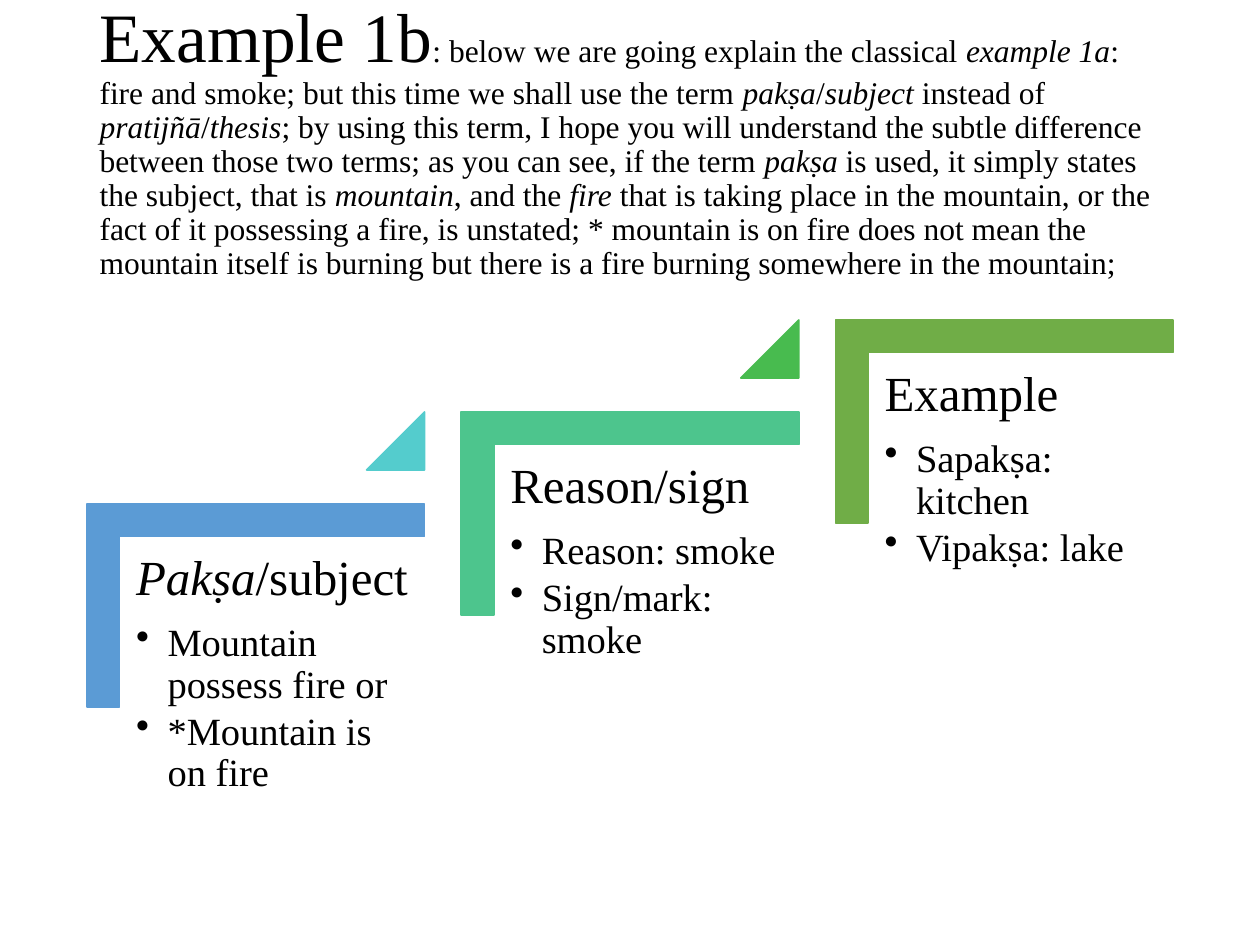
from dataclasses import dataclass

from lxml import etree
from pptx import Presentation
from pptx.dml.color import RGBColor
from pptx.enum.shapes import MSO_SHAPE
from pptx.enum.text import MSO_ANCHOR, MSO_AUTO_SIZE, PP_ALIGN
from pptx.oxml.ns import qn
from pptx.util import Pt

CORNER, TRIANGLE = MSO_SHAPE.CORNER, MSO_SHAPE.ISOSCELES_TRIANGLE
LEFT, TOP, MIDDLE = PP_ALIGN.LEFT, MSO_ANCHOR.TOP, MSO_ANCHOR.MIDDLE
NO_FIT = MSO_AUTO_SIZE.NONE
TITLE_ONLY = 5
EMU_PER_PX = 9144  # 100 px to the inch


@dataclass(frozen=True)
class Theme:
    font: str = "Times New Roman"
    text: str = "000000"
    title: float = 39.6
    intro: int = 18
    heading: int = 28
    item: int = 22
    corners: tuple = ("5B9BD5", "4DC58D", "70AD47")
    triangles: tuple = ("54CCCD", "48BB4F")


THEME = Theme()

INTRO = (
    ": below we are going explain the classical _example 1a_: fire and smoke; "
    "but this time we shall use the term _pakṣa_/_subject_ instead of "
    "_pratijñā_/_thesis_; by using this term, I hope you will understand the "
    "subtle difference between those two terms; as you can see, if the term "
    "_pakṣa_ is used, it simply states the subject, that is _mountain_, and the "
    "_fire _that is taking place in the mountain, or the fact of it possessing "
    "a fire, is unstated; * mountain is on fire does not mean the mountain "
    "itself is burning but there is a fire burning somewhere in the mountain;"
)
STEPS = [
    ("_Pakṣa_/subject", ["Mountain possess fire or", "*Mountain is on fire"]),
    ("Reason/sign", ["Reason: smoke", "Sign/mark: smoke"]),
    ("Example", ["Sapakṣa: kitchen", "Vipakṣa: lake"]),
]


def px(*values):
    return [round(v * EMU_PER_PX) for v in values]


def add_text(p, text, size, after=None, bullet=False):
    """Fill a paragraph; parts between underscores are italic."""
    for i, part in enumerate(text.split("_")):
        if part:
            r = p.add_run()
            r.text = part
            r.font.name = THEME.font
            r.font.size = Pt(size)
            r.font.italic = i % 2 == 1
            r.font.color.rgb = RGBColor.from_string(THEME.text)
    p.alignment = LEFT
    p.line_spacing = 0.9
    pPr = p._p.get_or_add_pPr()
    if after:
        spacing = etree.SubElement(pPr, qn("a:spcAft"))
        etree.SubElement(spacing, qn("a:spcPct")).set("val", str(after * 1000))
    if bullet:
        p.level = 1
        indent, = px(25)
        pPr.set("marL", str(indent))
        pPr.set("indent", str(-indent))
        etree.SubElement(pPr, qn("a:buChar")).set("char", "•")


def add_solid(shapes, kind, box, color, adjustments):
    sp = shapes.add_shape(kind, *px(*box))
    sp.shadow.inherit = False
    sp.fill.solid()
    sp.fill.fore_color.rgb = RGBColor.from_string(color)
    sp.line.color.rgb = RGBColor.from_string(color)
    sp.line.width = Pt(1)
    for i, value in enumerate(adjustments):
        sp.adjustments[i] = value
    return sp


def add_title(s, x, y, w, h):
    sp = s.shapes.title
    sp.left, sp.top, sp.width, sp.height = px(x, y, w, h)
    tf = sp.text_frame
    tf.word_wrap = True
    tf.auto_size = NO_FIT
    tf.vertical_anchor = MIDDLE
    p = tf.paragraphs[0]
    add_text(p, "Example 1b", THEME.title)
    add_text(p, INTRO, THEME.intro)


def add_step(shapes, x, y, w, h, heading, items, color):
    """Corner bracket spanning w by h, with the text inside its angle."""
    # The corner is turned a quarter, so its own width and height are swapped
    box = (x + (w - h) / 2, y + (h - w) / 2, h, w)
    corner = add_solid(shapes, CORNER, box, color, (0.16, 0.16))
    corner.rotation = 90

    # Heading and bullet list
    tf = shapes.add_textbox(*px(x + 27, y + 27, w - 26, 212)).text_frame
    tf.word_wrap = True
    tf.vertical_anchor = TOP
    tf.margin_left, tf.margin_top, tf.margin_right, tf.margin_bottom = px(*[12] * 4)
    add_text(tf.paragraphs[0], heading, THEME.heading, after=35)
    for item in items:
        add_text(tf.add_paragraph(), item, THEME.item, after=15, bullet=True)


def add_staircase(s, x, y, w, h):
    """Steps climbing to the right, a triangle leading to each next one."""
    shapes = s.shapes.add_group_shape().shapes
    step_w, step_h, rise, side = 268, 161, 73, 46
    run = (w - step_w) / (len(STEPS) - 1)
    for i, (heading, items) in enumerate(STEPS):
        left, top = x + i * run, y + h - step_h - i * rise
        add_step(shapes, left, top, step_w, step_h, heading, items, THEME.corners[i])
        if i < len(THEME.triangles):
            box = (left + step_w - side, top - rise, side, side)
            add_solid(shapes, TRIANGLE, box, THEME.triangles[i], (1,))


def main():
    prs = Presentation()
    prs.slide_width, prs.slide_height = px(1000, 750)
    s = prs.slides.add_slide(prs.slide_layouts[TITLE_ONLY])
    add_title(s, 69, 40, 862, 145)
    add_staircase(s, 69, 254, 862, 307)
    prs.save("out.pptx")


if __name__ == "__main__":
    main()
